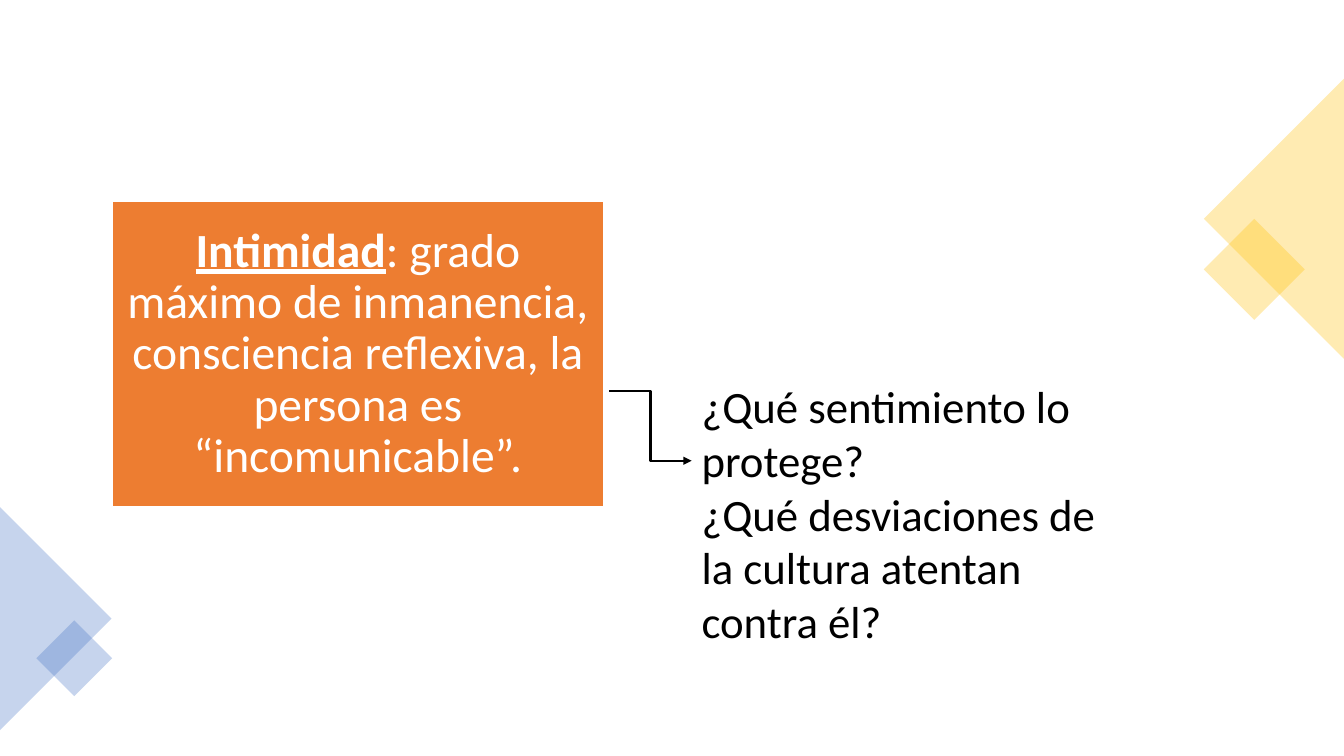
from lxml import etree
from pptx import Presentation
from pptx.dml.color import RGBColor
from pptx.enum.dml import MSO_THEME_COLOR
from pptx.enum.shapes import MSO_CONNECTOR, MSO_SHAPE
from pptx.enum.text import MSO_ANCHOR, MSO_AUTO_SIZE, PP_ALIGN
from pptx.oxml.ns import qn
from pptx.util import Cm, Pt

RECTANGLE = MSO_SHAPE.RECTANGLE
TRIANGLE = MSO_SHAPE.ISOSCELES_TRIANGLE
ELBOW = MSO_CONNECTOR.ELBOW
MIDDLE = MSO_ANCHOR.MIDDLE
GROW = MSO_AUTO_SIZE.SHAPE_TO_FIT_TEXT
CENTER = PP_ALIGN.CENTER

COLORS = {
    "gold": "FFC000",
    "blue": "4472C4",
    "orange": "ED7D31",
    "white": "FFFFFF",
    "black": "000000",
}
FONT = "Calibri"
SLIDE_WIDTH, SLIDE_HEIGHT = 33.87, 19.05


def rgb(name):
    return RGBColor.from_string(COLORS[name])


def add_run(paragraph, text, size, color, emphasis=False):
    run = paragraph.add_run()
    run.text = text
    run.font.name = FONT
    run.font.size = Pt(size)
    run.font.bold = emphasis
    run.font.underline = emphasis
    run.font.color.rgb = rgb(color)


def add_tinted_shape(slide, kind, center, size, rotation, color):
    (center_x, center_y), (width, height) = center, size
    shape = slide.shapes.add_shape(
        kind, Cm(center_x - width / 2), Cm(center_y - height / 2), Cm(width), Cm(height)
    )
    shape.rotation = rotation
    shape.shadow.inherit = False
    shape.line.fill.background()
    shape.fill.solid()
    shape.fill.fore_color.rgb = rgb(color)
    color_element = shape.fill._xPr.find(qn("a:solidFill"))[0]
    etree.SubElement(color_element, qn("a:alpha"), val="30000")


def add_edge_ornament(slide, box, rotation, square_offset, square_side, color):
    left, top, width, height = box
    center = (left + width / 2, top + height / 2)
    square_center = (left + square_offset[0], top + square_offset[1])
    add_tinted_shape(slide, TRIANGLE, center, (height, width), rotation, color)
    add_tinted_shape(slide, RECTANGLE, square_center, (square_side, square_side), 45, color)


def add_definition(slide, box, term, explanation):
    shape = slide.shapes.add_shape(RECTANGLE, *map(Cm, box))
    shape.shadow.inherit = False
    shape.fill.solid()
    shape.fill.fore_color.rgb = rgb("orange")
    shape.line.color.rgb = rgb("white")
    shape.line.width = Pt(1)
    frame = shape.text_frame
    frame.word_wrap = True
    frame.vertical_anchor = MIDDLE
    frame.margin_left = frame.margin_right = Cm(0.36)
    frame.margin_top = frame.margin_bottom = Cm(0.36)
    paragraph = frame.paragraphs[0]
    paragraph.alignment = CENTER
    paragraph.line_spacing = 0.9
    add_run(paragraph, term, 34, "white", emphasis=True)
    add_run(paragraph, explanation, 34, "white")


def add_questions(slide, box, questions):
    frame = slide.shapes.add_textbox(*map(Cm, box)).text_frame
    frame.word_wrap = True
    frame.auto_size = GROW
    for index, question in enumerate(questions):
        paragraph = frame.add_paragraph() if index else frame.paragraphs[0]
        add_run(paragraph, question, 32, "black")


def add_elbow_arrow(slide, box):
    left, top, width, height = box
    connector = slide.shapes.add_connector(
        ELBOW, Cm(left), Cm(top), Cm(left + width), Cm(top + height)
    )
    connector.line.color.rgb = rgb("black")
    connector.line.width = Pt(1.5)
    etree.SubElement(connector.line._get_or_add_ln(), qn("a:tailEnd"), type="triangle")
    etree.SubElement(connector._element.spPr, qn("a:effectLst"))


def main():
    presentation = Presentation()
    presentation.slide_width = Cm(SLIDE_WIDTH)
    presentation.slide_height = Cm(SLIDE_HEIGHT)
    slide = presentation.slides.add_slide(presentation.slide_layouts[6])
    slide.background.fill.solid()
    slide.background.fill.fore_color.rgb = rgb("white")

    gold_width = 3.53
    gold_box = (SLIDE_WIDTH - gold_width, 1.98, gold_width, 2 * gold_width)
    add_edge_ornament(slide, gold_box, 270, (1.27, 4.81), 1.8, "gold")
    blue_box = (0, 12.78, 2.81, 5.62)
    add_edge_ornament(slide, blue_box, 90, (1.87, 3.81), 1.35, "blue")

    add_definition(
        slide,
        (2.82, 5.08, 12.4, 7.7),
        "Intimidad",
        ": grado máximo de inmanencia, consciencia reflexiva, la persona es “incomunicable”.",
    )
    add_questions(
        slide,
        (17.43, 9.42, 10.82, 5.74),
        [
            "¿Qué sentimiento lo protege?",
            "¿Qué desviaciones de la cultura atentan contra él?",
        ],
    )
    add_elbow_arrow(slide, (15.36, 9.86, 2.07, 1.75))
    presentation.save("out.pptx")


if __name__ == "__main__":
    main()
